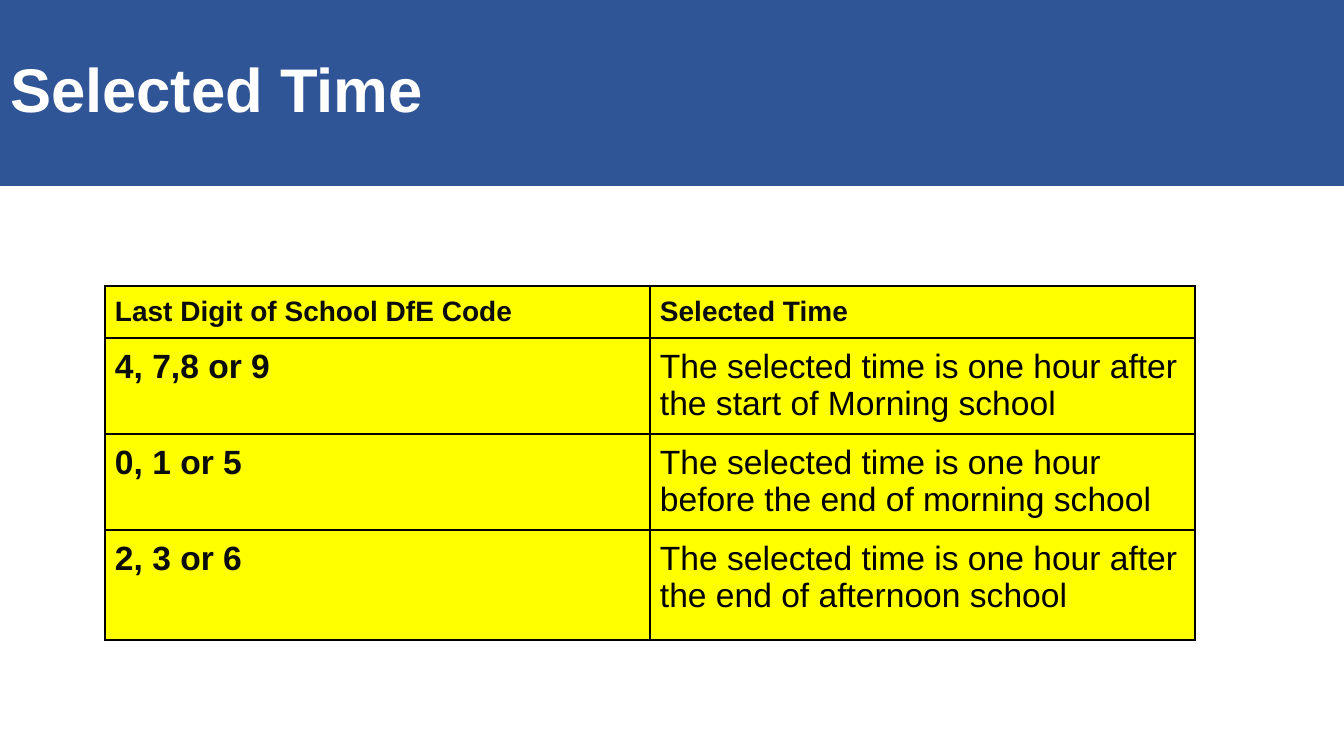
from lxml.etree import SubElement
from pptx import Presentation
from pptx.dml.color import RGBColor
from pptx.enum.text import MSO_ANCHOR as Anchor, MSO_AUTO_SIZE as AutoSize, PP_ALIGN as Align
from pptx.oxml.ns import qn
from pptx.util import Emu, Pt

# Content
TITLE = "Selected Time"
ROWS = [
    ("Last Digit of School DfE Code", "Selected Time"),
    ("4, 7,8 or 9", "The selected time is one hour after the start of Morning school"),
    ("0, 1 or 5", "The selected time is one hour before the end of morning school"),
    ("2, 3 or 6", "The selected time is one hour after the end of afternoon school"),
]

# Layout in px and formats
SLIDE_SIZE = (1344, 756)
BANNER_HEIGHT = 186
TABLE_LEFT, TABLE_TOP = 105, 286
COLUMN_WIDTH = 545
ROW_HEIGHTS = [52, 96, 96, 110]
INSET, WIDE_INSET = 10, 21
BLUE, YELLOW, BLACK = "2F5597", "FFFF00", "000000"
TITLE_FONT = {"name": "Arial", "size": Pt(44), "bold": True}
HEADER_FONT = {"name": "Arial", "size": Pt(20), "bold": True}
DIGITS_FONT = {"name": "Arial", "size": Pt(24), "bold": True}
TIME_FONT = {"name": "Arial", "size": Pt(24), "bold": False}


def px(length):
    return Emu(round(length * 914400 / 100.8))


def color(value):
    return RGBColor.from_string(value)


def set_attributes(target, values):
    for name, value in values.items():
        setattr(target, name, value)


def write(text_frame, text, font_values, text_color):
    paragraph = text_frame.paragraphs[0]
    paragraph.alignment = Align.LEFT
    run = paragraph.add_run()
    run.text = text
    set_attributes(run.font, font_values)
    run.font.color.rgb = color(text_color)
    return paragraph


def add_borders(cell):
    properties = cell._tc.get_or_add_tcPr()
    for side in ("a:lnL", "a:lnR", "a:lnT", "a:lnB"):
        line = SubElement(properties, qn(side), w=str(Pt(1)))
        fill = SubElement(line, qn("a:solidFill"))
        SubElement(fill, qn("a:srgbClr"), val=BLACK)


presentation = Presentation()
presentation.slide_width, presentation.slide_height = map(px, SLIDE_SIZE)
slide = presentation.slides.add_slide(presentation.slide_layouts[5])

# Title banner
title = slide.shapes.title
set_attributes(title, {"left": 0, "top": 0, "width": px(SLIDE_SIZE[0]),
                       "height": px(BANNER_HEIGHT)})
title.fill.solid()
title.fill.fore_color.rgb = color(BLUE)
set_attributes(title.text_frame, {"auto_size": AutoSize.NONE, "word_wrap": True,
                                  "vertical_anchor": Anchor.MIDDLE})
write(title.text_frame, TITLE, TITLE_FONT, "FFFFFF").line_spacing = 0.9

# Table of selected times
column_count = len(ROWS[0])
table = slide.shapes.add_table(
    len(ROWS), column_count, px(TABLE_LEFT), px(TABLE_TOP),
    px(COLUMN_WIDTH * column_count), px(sum(ROW_HEIGHTS))).table
for column in table.columns:
    column.width = px(COLUMN_WIDTH)
for row, height in zip(table.rows, ROW_HEIGHTS):
    row.height = px(height)

for row_index, texts in enumerate(ROWS):
    for column_index, text in enumerate(texts):
        is_header, is_digits = row_index == 0, column_index == 0
        cell = table.cell(row_index, column_index)
        set_attributes(cell, {
            "margin_left": px(INSET), "margin_top": px(INSET), "margin_bottom": px(INSET),
            "margin_right": px(WIDE_INSET if is_digits else INSET),
            "vertical_anchor": Anchor.TOP})
        add_borders(cell)
        cell.fill.solid()
        cell.fill.fore_color.rgb = color(YELLOW)
        font = HEADER_FONT if is_header else DIGITS_FONT if is_digits else TIME_FONT
        write(cell.text_frame, text, font, "0B0C0C" if font["bold"] else BLACK)

presentation.save("out.pptx")
